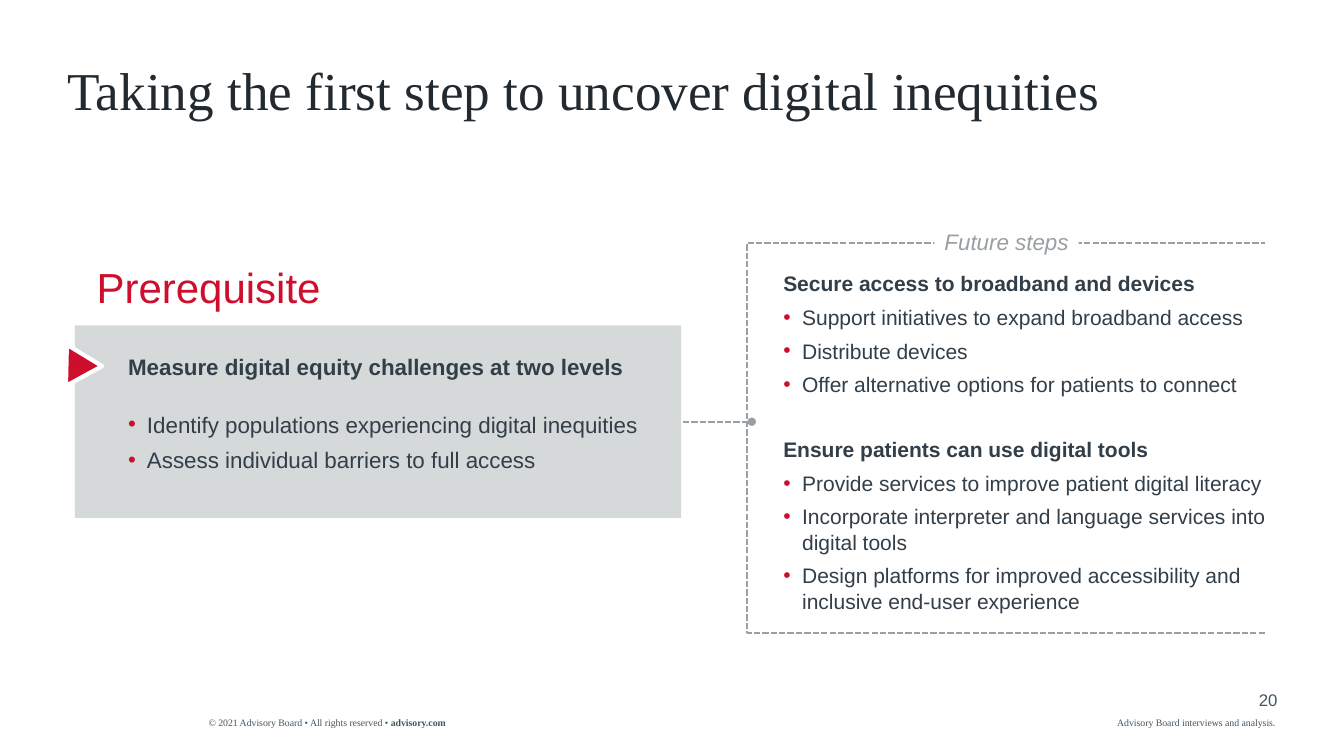
from lxml import etree
from pptx import Presentation
from pptx.dml.color import RGBColor
from pptx.enum.dml import MSO_LINE
from pptx.enum.shapes import MSO_CONNECTOR, MSO_SHAPE
from pptx.enum.text import MSO_ANCHOR, PP_ALIGN
from pptx.oxml.ns import qn
from pptx.util import Pt

RECT, TRIANGLE = MSO_SHAPE.RECTANGLE, MSO_SHAPE.ISOSCELES_TRIANGLE
BRACKET = MSO_SHAPE.LEFT_BRACKET
STRAIGHT = MSO_CONNECTOR.STRAIGHT
SYS_DASH = MSO_LINE.SQUARE_DOT
LEFT, CENTER, RIGHT = PP_ALIGN.LEFT, PP_ALIGN.CENTER, PP_ALIGN.RIGHT
TOP, MIDDLE = MSO_ANCHOR.TOP, MSO_ANCHOR.MIDDLE

SERIF, SANS = "Times New Roman", "Arial"
COLORS = {
    "title": "222A30", "text": "323E48", "footer": "445460", "muted": "999FA3",
    "panel": "D6D9DA", "accent": "CE0E2D", "white": "FFFFFF",
}


def rgb(name):
    return RGBColor.from_string(COLORS[name])


class Deck:
    """Holds the style and the current slide."""

    def __init__(self, width, height):
        self.prs = Presentation()
        self.prs.slide_width, self.prs.slide_height = Pt(width), Pt(height)
        self.slide = self.prs.slides.add_slide(self.prs.slide_layouts[6])

    def fill_text(self, sp, paragraphs, size, color="text", font=SANS, align=LEFT,
                  anchor=TOP, italic=False, spacing=None):
        """Each paragraph is (is_bullet, [(text, bold), ...])."""
        tf = sp.text_frame
        tf.word_wrap = True
        tf.vertical_anchor = anchor
        tf.margin_left = tf.margin_top = tf.margin_right = tf.margin_bottom = 0
        for i, (is_bullet, runs) in enumerate(paragraphs):
            p = tf.add_paragraph() if i else tf.paragraphs[0]
            p.alignment = align
            if is_bullet:
                self.bullet(p)
            if i:
                p.space_before = Pt(6)
            if spacing:
                p.line_spacing = spacing
            for text, bold in runs:
                r = p.add_run()
                r.text = text
                r.font.name, r.font.size = font, Pt(size)
                r.font.bold, r.font.italic = bold, italic
                r.font.color.rgb = rgb(color)

    def bullet(self, p, indent=13.5):
        pPr = p._p.get_or_add_pPr()
        pPr.set("marL", str(Pt(indent)))
        pPr.set("indent", str(-Pt(indent)))
        clr = etree.SubElement(pPr, qn("a:buClr"))
        etree.SubElement(clr, qn("a:srgbClr"), val=COLORS["accent"])
        etree.SubElement(pPr, qn("a:buFont"), typeface=SANS)
        etree.SubElement(pPr, qn("a:buChar"), char="•")

    def text(self, x, y, w, h, paragraphs, size, **style):
        sp = self.slide.shapes.add_textbox(Pt(x), Pt(y), Pt(w), Pt(h))
        self.fill_text(sp, paragraphs, size, **style)
        return sp

    def line_style(self, line, color, width, dash=None):
        line.color.rgb = rgb(color)
        line.width = Pt(width)
        if dash:
            line.dash_style = dash

    def shape(self, kind, x, y, w, h, fill=None, line=None, width=1.5, dash=None):
        sp = self.slide.shapes.add_shape(kind, Pt(x), Pt(y), Pt(w), Pt(h))
        sp.shadow.inherit = False
        if fill:
            sp.fill.solid()
            sp.fill.fore_color.rgb = rgb(fill)
        else:
            sp.fill.background()
        if line:
            self.line_style(sp.line, line, width, dash)
        else:
            sp.line.fill.background()
        return sp

    def dotted_link(self, x, y, target, side):
        """Dashed line with a dot at (x, y), joined to a side of the target."""
        cxn = self.slide.shapes.add_connector(STRAIGHT, Pt(x), Pt(y), Pt(x), Pt(y))
        cxn.end_connect(target, side)
        self.line_style(cxn.line, "muted", 1.5, SYS_DASH)
        spPr = cxn._element.spPr
        etree.SubElement(spPr.find(qn("a:ln")), qn("a:headEnd"), type="oval")
        etree.SubElement(spPr, qn("a:effectLst"))
        return cxn


def plain(text, bold=False):
    return [(False, [(text, bold)])]


def bullets(*items):
    return [(True, [(item, False)]) for item in items]


def main():
    deck = Deck(960, 540)

    # Title
    deck.text(48, 46, 864, 42.5,
              plain("Taking the first step to uncover digital inequities"),
              38, color="title", font=SERIF, spacing=0.9)

    # Prerequisite panel
    deck.text(69, 187, 207, 36, plain("Prerequisite"), 30, color="accent")
    panel = deck.shape(RECT, 53.5, 232.5, 433, 137.5, fill="panel")
    marker = deck.shape(TRIANGLE, 39, 252, 29.5, 25.5,
                        fill="accent", line="white", width=3)
    marker.rotation = 211.3
    deck.text(91.5, 252, 390, 19.5,
              plain("Measure digital equity challenges at two levels", True), 16)
    deck.text(91.5, 293.5, 369.5, 45,
              bullets("Identify populations experiencing digital inequities",
                      "Assess individual barriers to full access"), 16)

    # Link from the panel to the future steps
    deck.dotted_link(537, 301.25, panel, 3)

    # Future steps frame
    frame = deck.shape(BRACKET, 533.5, 173.5, 370, 278.5,
                       line="muted", dash=SYS_DASH)
    frame.adjustments[0] = 0
    label = deck.shape(RECT, 667.5, 163, 103, 19.5, fill="white")
    deck.fill_text(label, plain("Future steps"), 16, color="muted",
                   align=CENTER, anchor=MIDDLE, italic=True)

    # Future steps
    steps = [
        (193.5, 91, "Secure access to broadband and devices",
         ["Support initiatives to expand broadband access",
          "Distribute devices",
          "Offer alternative options for patients to connect"]),
        (312, 127.5, "Ensure patients can use digital tools",
         ["Provide services to improve patient digital literacy",
          "Incorporate interpreter and language services into digital tools",
          "Design platforms for improved accessibility and inclusive "
          "end-user experience"]),
    ]
    for top, height, heading, items in steps:
        deck.text(559.5, top, 346, height,
                  plain(heading, True) + bullets(*items), 15)

    # Footer
    copyright_line = [(False, [("© 2021 Advisory Board • All rights reserved • ", False),
                               ("advisory.com", True)])]
    deck.text(149, 512, 235, 8.5, copyright_line, 7, color="footer", font=SERIF)
    deck.text(798, 512, 122, 8.5, plain("Advisory Board interviews and analysis."),
              7, color="footer", font=SERIF)
    deck.text(876, 493, 36.5, 14.5, plain("20"), 12, color="footer", align=RIGHT)

    deck.prs.save("out.pptx")


if __name__ == "__main__":
    main()
